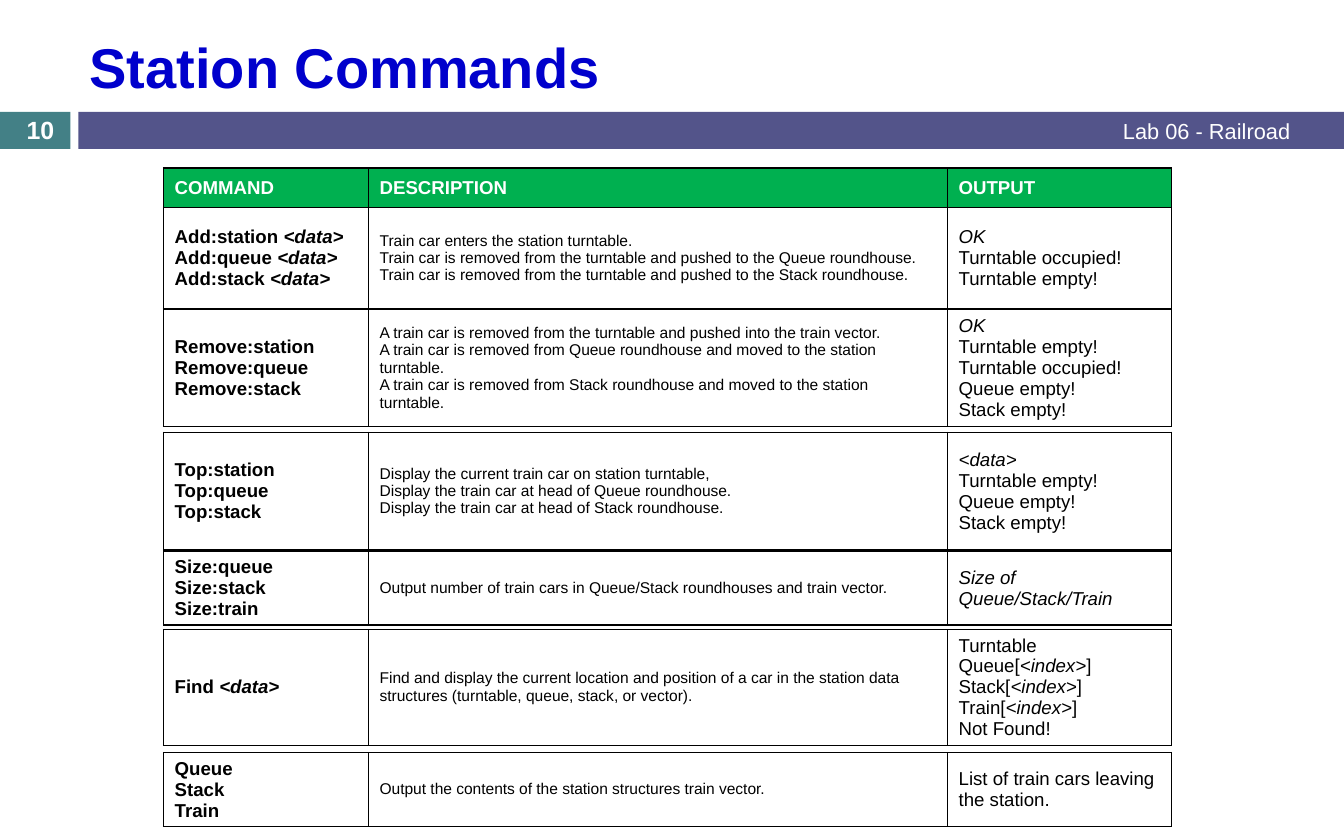
from dataclasses import dataclass

from lxml import etree
from pptx import Presentation
from pptx.dml.color import RGBColor
from pptx.enum import shapes, text
from pptx.oxml import ns
from pptx.util import Inches, Pt


@dataclass(frozen=True)
class Theme:
    font: str = "Arial"
    title: str = "0000CC"
    teal: str = "438086"
    purple: str = "53548A"
    green: str = "00B050"
    white: str = "FFFFFF"
    black: str = "000000"
    title_size: int = 36
    number_size: int = 16
    label_size: int = 14
    cell_size: int = 12
    description_size: int = 10
    border_width: float = 1


@dataclass(frozen=True)
class Style:
    size: int
    color: str
    bold: bool = False


@dataclass(frozen=True)
class Row:
    height: float
    command: str
    description: str
    output: str
    header: bool = False


@dataclass(frozen=True)
class CommandTable:
    top: float
    rows: tuple[Row, ...]


THEME = Theme()
TABLE_LEFT = 1.46
COLUMN_WIDTHS = (1.83, 5.17, 2)
ITALIC_MARK = "*"
PARAGRAPH_MARK = "\n\n"

TABLES = (
    CommandTable(1.5, (
        Row(0.35, "COMMAND", "DESCRIPTION", "OUTPUT", header=True),
        Row(0.91,
            "Add:station *<data>*\nAdd:queue *<data>*\nAdd:stack *<data>*",
            "Train car enters the station turntable.\n"
            "Train car is removed from the turntable and pushed to the Queue roundhouse.\n"
            "Train car is removed from the turntable and pushed to the Stack roundhouse.",
            "*OK*\nTurntable occupied!\nTurntable empty!"),
    )),
    CommandTable(2.76, (
        Row(1.05,
            "Remove:station\nRemove:queue\nRemove:stack",
            "A train car is removed from the turntable and pushed into the train vector.\n"
            "A train car is removed from Queue roundhouse and moved to the station turntable.\n"
            "A train car is removed from Stack roundhouse and moved to the station turntable.",
            "*OK*\nTurntable empty!\n\nTurntable occupied!\n\nQueue empty!\n\nStack empty!"),
    )),
    CommandTable(3.86, (
        Row(1.05,
            "Top:station\nTop:queue\nTop:stack",
            "Display the current train car on station turntable,\n"
            "Display the train car at head of Queue roundhouse.\n"
            "Display the train car at head of Stack roundhouse.",
            "*<data>*\nTurntable empty!\nQueue empty!\n\nStack empty!"),
    )),
    CommandTable(4.92, (
        Row(0.49,
            "Size:queue\nSize:stack\n\nSize:train",
            "Output number of train cars in Queue/Stack roundhouses and train vector.",
            "*Size of Queue/Stack/Train*"),
    )),
    CommandTable(5.62, (
        Row(0.91,
            "Find *<data>*",
            "Find and display the current location and position of a car in the station data "
            "structures (turntable, queue, stack, or vector).",
            "Turntable\nQueue[*<index>*]\nStack[*<index>*]\nTrain[*<index>*]\nNot Found!"),
    )),
    CommandTable(6.72, (
        Row(0.49,
            "Queue\n\nStack\n\nTrain",
            "Output the contents of the station structures train vector.",
            "List of train cars leaving the station."),
    )),
)


def write_text(frame, content: str, style: Style, alignment=text.PP_ALIGN.LEFT) -> None:
    for index, block in enumerate(content.split(PARAGRAPH_MARK)):
        paragraph = frame.add_paragraph() if index else frame.paragraphs[0]
        paragraph.alignment = alignment
        for line_index, line in enumerate(block.split("\n")):
            if line_index:
                paragraph.add_line_break()
            for part_index, part in enumerate(line.split(ITALIC_MARK)):
                if not part:
                    continue
                run = paragraph.add_run()
                run.text = part
                run.font.name = THEME.font
                run.font.size = Pt(style.size)
                run.font.bold = style.bold
                run.font.italic = part_index % 2 == 1
                run.font.color.rgb = RGBColor.from_string(style.color)


def add_bar(slide, left: float, width: float, color: str) -> None:
    shape = slide.shapes.add_shape(
        shapes.MSO_SHAPE.RECTANGLE, Inches(left), Inches(1), Inches(width), Inches(0.33))
    shape.shadow.inherit = False
    shape.fill.solid()
    shape.fill.fore_color.rgb = RGBColor.from_string(color)
    shape.line.fill.background()


def add_label(slide, box: tuple[float, ...], content: str, style: Style, alignment) -> None:
    frame = slide.shapes.add_textbox(*map(Inches, box)).text_frame
    frame.word_wrap = True
    frame.vertical_anchor = text.MSO_ANCHOR.MIDDLE
    write_text(frame, content, style, alignment)


def add_borders(cell) -> None:
    properties = cell._tc.get_or_add_tcPr()
    for index, side in enumerate(("lnL", "lnR", "lnT", "lnB")):
        line = etree.Element(ns.qn(f"a:{side}"), w=str(Pt(THEME.border_width)))
        fill = etree.SubElement(line, ns.qn("a:solidFill"))
        etree.SubElement(fill, ns.qn("a:srgbClr"), val=THEME.black)
        properties.insert(index, line)


def add_command_table(slide, item: CommandTable) -> None:
    height = sum(row.height for row in item.rows)
    table = slide.shapes.add_table(
        len(item.rows), len(COLUMN_WIDTHS), Inches(TABLE_LEFT), Inches(item.top),
        Inches(sum(COLUMN_WIDTHS)), Inches(height)).table
    table.first_row = False
    table.horz_banding = False
    for column, width in zip(table.columns, COLUMN_WIDTHS):
        column.width = Inches(width)
    header_style = Style(THEME.cell_size, THEME.white, True)
    body_styles = (
        Style(THEME.cell_size, THEME.black, True),
        Style(THEME.description_size, THEME.black),
        Style(THEME.cell_size, THEME.black),
    )
    for table_row, row in zip(table.rows, item.rows):
        table_row.height = Inches(row.height)
        contents = (row.command, row.description, row.output)
        for cell, content, body_style in zip(table_row.cells, contents, body_styles):
            cell.vertical_anchor = text.MSO_ANCHOR.MIDDLE
            cell.fill.solid()
            cell.fill.fore_color.rgb = RGBColor.from_string(
                THEME.green if row.header else THEME.white)
            write_text(cell.text_frame, content, header_style if row.header else body_style)
            add_borders(cell)


def add_title(slide, content: str) -> None:
    title = slide.shapes.title
    title.left, title.top, title.width, title.height = map(Inches, (0.7, 0.19, 10.91, 0.8))
    title.text_frame.vertical_anchor = text.MSO_ANCHOR.MIDDLE
    write_text(title.text_frame, content, Style(THEME.title_size, THEME.title, True))


def main() -> None:
    presentation = Presentation()
    presentation.slide_width = Inches(12)
    presentation.slide_height = Inches(7.5)
    slide = presentation.slides.add_slide(presentation.slide_layouts[5])
    add_bar(slide, 0, 0.63, THEME.teal)
    add_bar(slide, 0.7, 11.3, THEME.purple)
    add_title(slide, "Station Commands")
    for item in TABLES:
        add_command_table(slide, item)
    add_label(slide, (6.17, 1, 5.45, 0.33), "Lab 06 - Railroad",
              Style(THEME.label_size, THEME.white), text.PP_ALIGN.RIGHT)
    add_label(slide, (0, 1.01, 0.72, 0.3), "10",
              Style(THEME.number_size, THEME.white, True), text.PP_ALIGN.CENTER)
    presentation.save("out.pptx")


if __name__ == "__main__":
    main()
